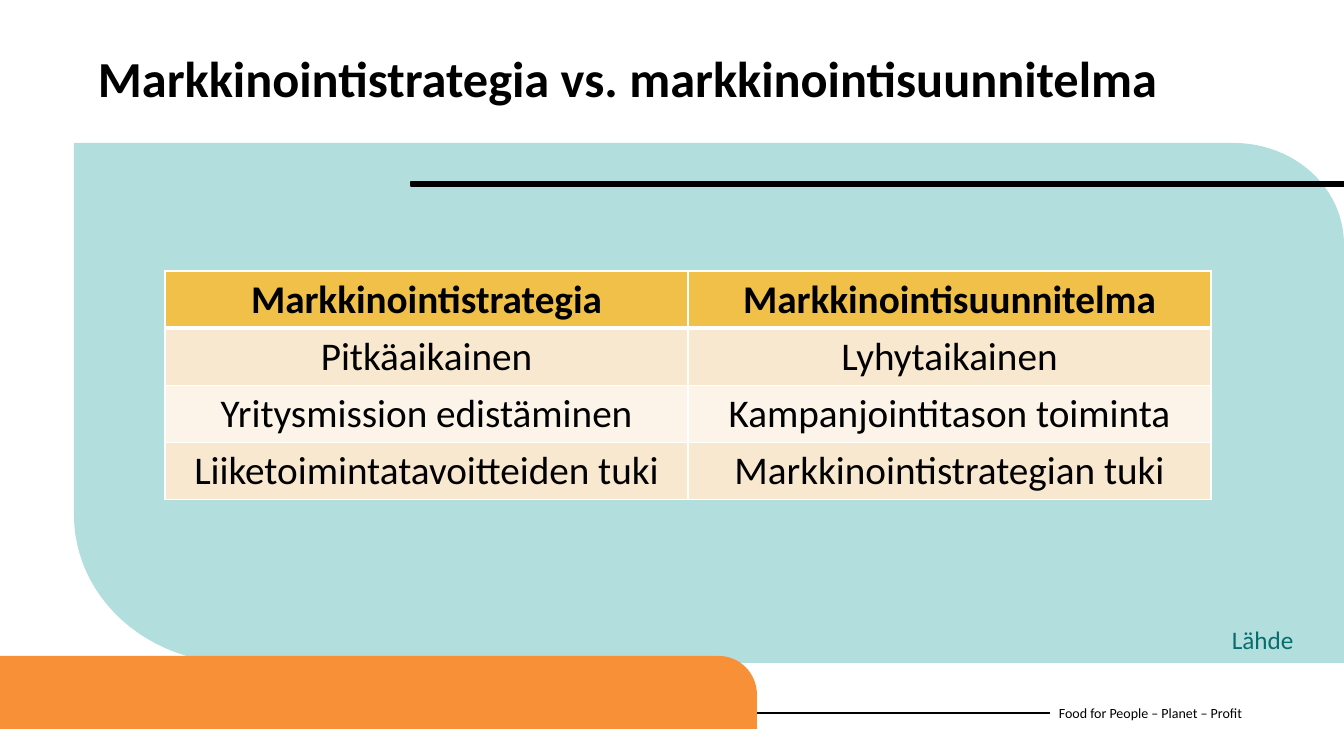
"""Build the slide comparing marketing strategy and marketing plan."""
from math import cos, pi, sin

from lxml.etree import SubElement
from pptx import Presentation
from pptx.dml.color import RGBColor
from pptx.enum.shapes import MSO_CONNECTOR, MSO_SHAPE
from pptx.enum.text import MSO_ANCHOR, PP_ALIGN
from pptx.oxml.ns import qn
from pptx.util import Emu, Pt

TITLE = "Markkinointistrategia vs. markkinointisuunnitelma"
COMPARISON = [
    ("Markkinointistrategia", "Markkinointisuunnitelma"),
    ("Pitkäaikainen", "Lyhytaikainen"),
    ("Yritysmission edistäminen", "Kampanjointitason toiminta"),
    ("Liiketoimintatavoitteiden tuki", "Markkinointistrategian tuki"),
]
SOURCE_LABEL = "Lähde"
SLOGAN = "Food for People – Planet – Profit"

FONT = "Calibri"
BLACK = RGBColor(0x00, 0x00, 0x00)
TEAL = RGBColor(0xB2, 0xDE, 0xDD)
DARK_TEAL = RGBColor(0x08, 0x6D, 0x6E)
ORANGE = RGBColor(0xF7, 0x90, 0x37)
GOLD = RGBColor(0xF0, 0xC0, 0x49)
BANDS = [RGBColor(0xFC, 0xF4, 0xE9), RGBColor(0xF9, 0xE8, 0xD0)]

SLIDE_W, SLIDE_H = 1344, 756
EMU_PER_PX = 12192000 / SLIDE_W
TABLE_LEFT, TABLE_TOP, COLUMN_W, ROW_H = 165, 271, 523, 57
CORNER_STEPS = 24


def px(length):
    return Emu(round(length * EMU_PER_PX))


def style(paragraph, size, color, bold=False):
    for run in paragraph.runs:
        font = run.font
        font.name, font.size, font.bold = FONT, Pt(size), bold
        font.color.rgb = color


def add_label(slide, text, box, size, color, bold=False, anchor=MSO_ANCHOR.TOP):
    frame = slide.shapes.add_textbox(*map(px, box)).text_frame
    frame.word_wrap = True
    frame.vertical_anchor = anchor
    frame.text = text
    style(frame.paragraphs[0], size, color, bold)
    return frame.paragraphs[0]


def arc(center_x, center_y, radius_x, radius_y, start):
    angles = [start + pi / 2 * i / CORNER_STEPS for i in range(CORNER_STEPS + 1)]
    return [(center_x + radius_x * cos(a), center_y + radius_y * sin(a)) for a in angles]


def add_panel(slide, box, color, top_right, bottom_left=None):
    left, top, right, bottom = box
    radius_x, radius_y = top_right
    outline = [(left, top)]
    outline += arc(right - radius_x, top + radius_y, radius_x, radius_y, -pi / 2)
    outline.append((right, bottom))
    if bottom_left:
        radius_x, radius_y = bottom_left
        outline += arc(left + radius_x, bottom - radius_y, radius_x, radius_y, pi / 2)
    else:
        outline.append((left, bottom))
    points = [(px(x), px(y)) for x, y in outline]
    builder = slide.shapes.build_freeform(*points[0])
    builder.add_line_segments(points[1:], close=True)
    panel = builder.convert_to_shape()
    panel.shadow.inherit = False
    panel.fill.solid()
    panel.fill.fore_color.rgb = color
    panel.line.fill.background()


def add_footer_line(slide):
    line = slide.shapes.add_connector(
        MSO_CONNECTOR.STRAIGHT, px(0), px(713), px(1050), px(713))
    line.line.color.rgb = BLACK
    line.line.width = Pt(1.5)
    SubElement(line._element.spPr, qn("a:effectLst"))


def add_bar(slide):
    bar = slide.shapes.add_shape(MSO_SHAPE.RECTANGLE, px(411), px(182), px(933), px(4))
    bar.shadow.inherit = False
    bar.fill.solid()
    bar.fill.fore_color.rgb = BLACK
    bar.line.color.rgb = BLACK
    bar.line.width = Pt(1.93)


def set_borders(cell, widths):
    properties = cell._tc.get_or_add_tcPr()
    for position, (side, width) in enumerate(widths.items()):
        border = properties.makeelement(qn(f"a:{side}"), {"w": str(Pt(width))})
        fill = SubElement(border, qn("a:solidFill"))
        SubElement(fill, qn("a:srgbClr"), val="FFFFFF")
        properties.insert(position, border)


def add_comparison(slide):
    row_count, column_count = len(COMPARISON), len(COMPARISON[0])
    table = slide.shapes.add_table(
        row_count, column_count, px(TABLE_LEFT), px(TABLE_TOP),
        px(COLUMN_W * column_count), px(ROW_H * row_count)).table
    for column in table.columns:
        column.width = px(COLUMN_W)
    for r, texts in enumerate(COMPARISON):
        table.rows[r].height = px(ROW_H)
        header = r == 0
        for c, text in enumerate(texts):
            cell = table.cell(r, c)
            cell.fill.solid()
            cell.fill.fore_color.rgb = GOLD if header else BANDS[r % 2]
            set_borders(cell, {"lnL": 1, "lnR": 1, "lnT": 3 if r == 1 else 1,
                               "lnB": 3 if header else 1})
            cell.text_frame.text = text
            paragraph = cell.text_frame.paragraphs[0]
            paragraph.alignment = PP_ALIGN.CENTER
            style(paragraph, 28, BLACK, header)


def main():
    deck = Presentation()
    deck.slide_width, deck.slide_height = px(SLIDE_W), px(SLIDE_H)
    slide = deck.slides.add_slide(deck.slide_layouts[6])
    add_label(slide, SLOGAN, (1049, 693, 275, 40), 10, BLACK, anchor=MSO_ANCHOR.MIDDLE)
    add_footer_line(slide)
    add_panel(slide, (74, 143, 1344, 663), TEAL, (110, 101), (162, 148))
    add_panel(slide, (0, 656, 757, 729), ORANGE, (38, 39))
    add_bar(slide)
    title = add_label(slide, TITLE, (88, 49, 1168, 89), 36, BLACK, bold=True)
    title.line_spacing = 0.9
    add_label(slide, SOURCE_LABEL, (1222, 619, 122, 40), 18, DARK_TEAL)
    add_comparison(slide)
    deck.save("out.pptx")


if __name__ == "__main__":
    main()
